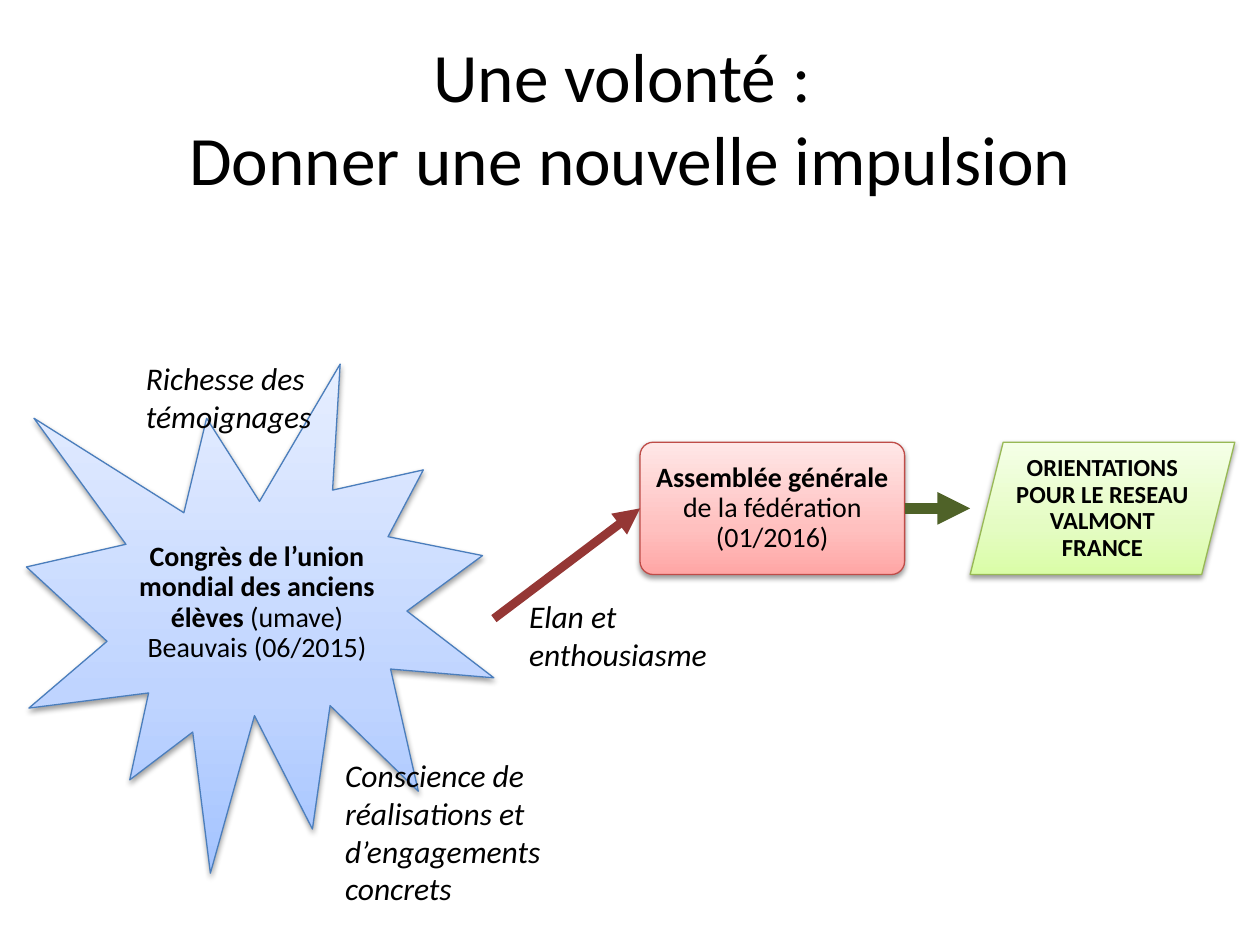
from pptx import Presentation
from pptx.dml.color import RGBColor
from pptx.enum.shapes import MSO_CONNECTOR as Connector, MSO_SHAPE as Shape
from pptx.enum.text import MSO_ANCHOR as Anchor, PP_ALIGN as Align
from pptx.oxml import parse_xml
from pptx.oxml.ns import nsdecls, qn
from pptx.util import Inches, Pt

COLORS = {
    "text": "000000",
    "blue": ("A4C4FF", "BFD4FF", "E6EEFF"), "blue line": "4B7EBC",
    "red": ("FFA6A5", "FFC0BF", "FFE7E7"), "red line": "BF4C48",
    "green": ("DAFDA7", "E4FCC2", "F5FFE7"), "green line": "98B955",
    "red arrow": "953735", "green arrow": "4F6228",
}
NS = nsdecls("a")


def style_step(shape, color, margins, size, spans):
    """Give a step its gradient, outline, soft shadow and centred text."""
    shape.fill.gradient()
    shape.fill.gradient_angle = 90
    stops = shape.fill._xPr.find(".//" + qn("a:gsLst"))
    stops.clear()
    for position, stop in zip((0, 35000, 100000), COLORS[color]):
        stops.append(parse_xml(
            f'<a:gs {NS} pos="{position}"><a:srgbClr val="{stop}"/></a:gs>'))
    shape.line.color.rgb = RGBColor.from_string(COLORS[color + " line"])
    shape.line.width = Pt(0.75)
    shape.shadow.inherit = False
    shape._element.spPr.find(qn("a:effectLst")).append(parse_xml(
        f'<a:outerShdw {NS} blurRad="40000" dist="20000" dir="5400000" rotWithShape="0">'
        '<a:srgbClr val="000000"><a:alpha val="38000"/></a:srgbClr></a:outerShdw>'))
    write(shape.text_frame, size, spans, Align.CENTER, margins).line_spacing = 0.9


def write(frame, size, spans, align=Align.LEFT, margins=None, anchor=Anchor.MIDDLE):
    """Fill a frame with one paragraph of (text, bold) spans and return it."""
    frame.word_wrap = True
    frame.vertical_anchor = anchor
    if margins:
        (frame.margin_left, frame.margin_top,
         frame.margin_right, frame.margin_bottom) = map(Inches, margins)
    para = frame.paragraphs[0]
    para.alignment = align
    para.font.name = "Calibri"
    para.font.size = Pt(size)
    para.font.color.rgb = RGBColor.from_string(COLORS["text"])
    for text, bold in spans:
        span = para.add_run()
        span.text = text
        span.font.bold = bold
    return para


deck = Presentation()
deck.slide_width, deck.slide_height = Inches(10), Inches(7.5)
page = deck.slides.add_slide(deck.slide_layouts[6])

# Title
title = page.shapes.add_textbox(Inches(0.5), Inches(0.3), Inches(9), Inches(1.25))
para = write(title.text_frame, 39.6, [("Une volonté : ", False)], Align.CENTER)
para.add_line_break()
para.add_run().text = "Donner une nouvelle impulsion"

# Congress star
star_points = [
    (2.06, 3.98), (2.7, 2.89), (2.64, 3.89), (3.36, 3.73), (3.08, 4.26), (3.83, 4.41),
    (3.23, 4.85), (3.92, 5.38), (3.1, 5.31), (3.32, 6.28), (2.62, 5.6), (2.48, 6.58),
    (2.02, 5.68), (1.67, 6.93), (1.53, 5.81), (1.03, 6.19), (1.18, 5.5), (0.23, 5.62),
    (0.85, 5.09), (0.21, 4.5), (1, 4.32), (0.27, 3.32), (1.46, 4.07), (1.64, 3.32),
]
corners = [(Inches(x), Inches(y)) for x, y in star_points]
outline = page.shapes.build_freeform(*corners[0])
outline.add_line_segments(corners[1:], close=True)
star = outline.convert_to_shape()
style_step(star, "blue", (0.8, 1.19, 0.85, 1.44), 16, [
    ("Congrès de l’union mondial des anciens élèves ", True),
    ("(umave) Beauvais (06/2015)", False)])

# Assembly and orientations
step_top, step_width, step_height = Inches(3.51), Inches(2.1), Inches(1.05)
step_margins = (0.01,) * 4
assembly = page.shapes.add_shape(
    Shape.ROUNDED_RECTANGLE, Inches(5.08), step_top, step_width, step_height)
assembly.adjustments[0] = 0.1
style_step(assembly, "red", step_margins, 16, [
    ("Assemblée générale ", True), ("de la fédération (01/2016)", False)])
orientations = page.shapes.add_shape(
    Shape.PARALLELOGRAM, Inches(7.7), step_top, step_width, step_height)
orientations.adjustments[0] = 0.25
style_step(orientations, "green", step_margins, 14, [
    ("ORIENTATIONS POUR LE RESEAU VALMONT FRANCE", True)])

# Arrows
step_middle = step_top + step_height // 2
to_assembly = page.shapes.add_connector(
    Connector.STRAIGHT, Inches(3.92), Inches(4.91), assembly.left, step_middle)
to_assembly.end_connect(assembly, 1)
to_orientations = page.shapes.add_connector(
    Connector.STRAIGHT, assembly.left + step_width, step_middle,
    orientations.left, step_middle)
to_orientations.begin_connect(assembly, 3)
for arrow, color, width in ((to_assembly, "red arrow", 5),
                            (to_orientations, "green arrow", 6.25)):
    arrow.line.color.rgb = RGBColor.from_string(COLORS[color])
    arrow.line.width = Pt(width)
    arrow.line._get_or_add_ln().append(parse_xml(f'<a:tailEnd {NS} type="triangle"/>'))
    arrow._element.spPr.append(parse_xml(f"<a:effectLst {NS}/>"))

# Comments in italics
for left, top, width, height, text in (
        (2.64, 5.95, 1.81, 1.31, "Conscience de réalisations et d’engagements concrets"),
        (1.06, 2.8, 1.57, 0.71, "Richesse des témoignages"),
        (4.1, 4.69, 1.81, 0.71, "Elan et enthousiasme")):
    box = page.shapes.add_textbox(*map(Inches, (left, top, width, height)))
    para = write(box.text_frame, 18, [(text, False)], anchor=Anchor.TOP)
    para.font.italic = True

deck.save("out.pptx")
